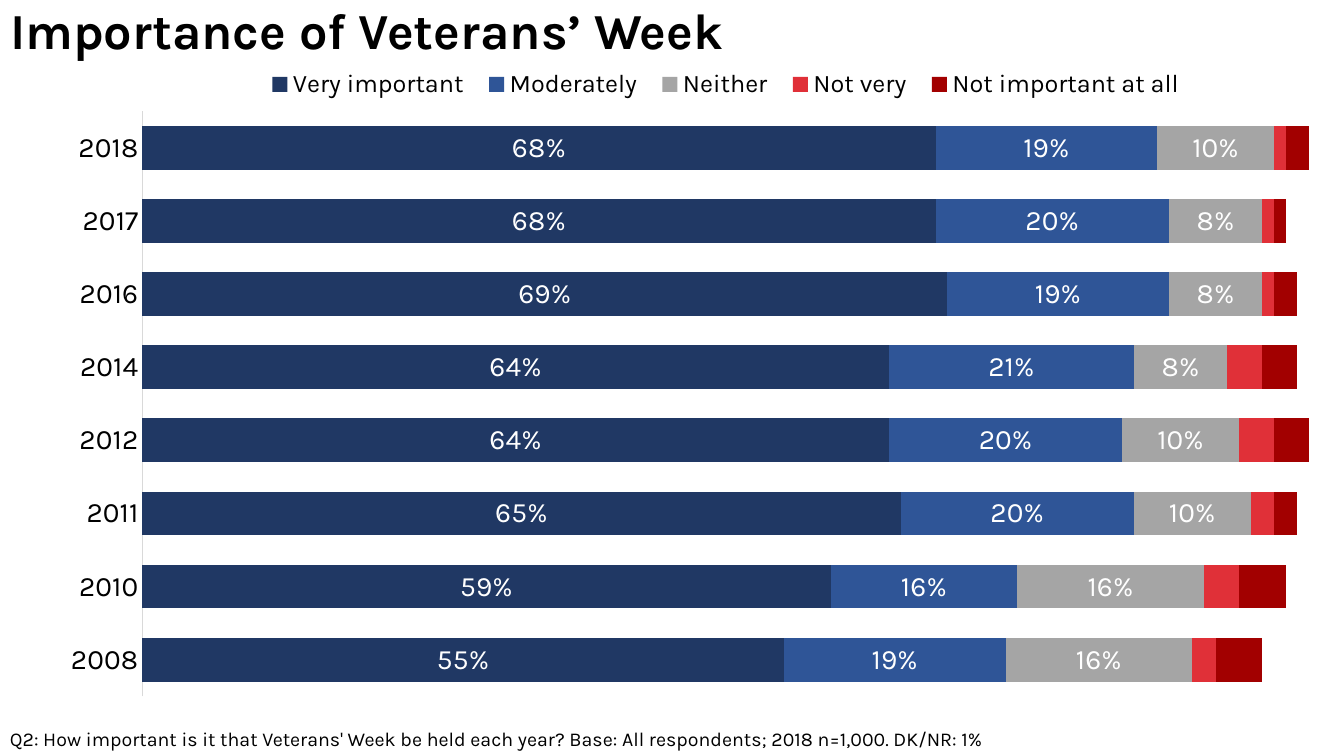
import pptx
import pptx.chart.data
import pptx.dml.color
import pptx.enum.chart
import pptx.enum.text
import pptx.oxml
import pptx.oxml.ns
import pptx.util

Pt = pptx.util.Pt
RGBColor = pptx.dml.color.RGBColor
enums = pptx.enum.chart

FONT = "Karla"
BLACK = RGBColor(0x00, 0x00, 0x00)
WHITE = RGBColor(0xFF, 0xFF, 0xFF)
RULE = RGBColor(0xD9, 0xD9, 0xD9)
NAVY = RGBColor(0x20, 0x38, 0x64)
BLUE = RGBColor(0x2F, 0x55, 0x97)
GREY = RGBColor(0xA5, 0xA5, 0xA5)
RED = RGBColor(0xE0, 0x30, 0x38)
DARK = RGBColor(0xA2, 0x00, 0x00)

YEARS = ["2008", "2010", "2011", "2012", "2014", "2016", "2017", "2018"]
SERIES = [
    ("Very important", NAVY, True, [55, 59, 65, 64, 64, 69, 68, 68]),
    ("Moderately", BLUE, True, [19, 16, 20, 20, 21, 19, 20, 19]),
    ("Neither", GREY, True, [16, 16, 10, 10, 8, 8, 8, 10]),
    ("Not very", RED, False, [2, 3, 2, 3, 3, 1, 1, 1]),
    ("Not important at all", DARK, False, [4, 4, 2, 3, 3, 2, 1, 2]),
]


def style(font, size, color=BLACK, bold=False):
    font.name = FONT
    font.size = Pt(size)
    font.bold = bold
    font.color.rgb = color


def write(frame, text, size, anchor, spacing=1.0, **look):
    frame.word_wrap = True
    frame.vertical_anchor = anchor
    para = frame.paragraphs[0]
    para.line_spacing = spacing
    run = para.add_run()
    run.text = text
    style(run.font, size, **look)


def place(part, box):
    part.left, part.top, part.width, part.height = map(Pt, box)


def layout(after, x, y, w, h, inner=False):
    target = '<c:layoutTarget val="inner"/>' if inner else ""
    old = after.getparent().find(pptx.oxml.ns.qn("c:layout"))
    if old is not None:
        after.getparent().remove(old)
    return pptx.oxml.parse_xml(
        f'<c:layout {pptx.oxml.ns.nsdecls("c")}><c:manualLayout>{target}'
        '<c:xMode val="edge"/><c:yMode val="edge"/>'
        f'<c:x val="{x}"/><c:y val="{y}"/><c:w val="{w}"/><c:h val="{h}"/>'
        '</c:manualLayout></c:layout>')


def add_title(slide, box):
    title = slide.shapes.title
    place(title, box)
    title.fill.solid()
    title.fill.fore_color.rgb = WHITE
    write(title.text_frame, "Importance of Veterans’ Week", 36,
          pptx.enum.text.MSO_ANCHOR.MIDDLE, spacing=0.9, bold=True)
    title.text_frame.paragraphs[0].alignment = pptx.enum.text.PP_ALIGN.LEFT


def add_bars(slide, box):
    data = pptx.chart.data.CategoryChartData(number_format="0%")
    data.categories = YEARS
    for name, color, shown, values in SERIES:
        data.add_series(name, [value / 100 for value in values])
    frame = slide.shapes.add_chart(
        enums.XL_CHART_TYPE.BAR_STACKED, *map(Pt, box), data)
    slide.shapes.title.element.addprevious(frame.element)
    chart = frame.chart
    style(chart.font, 16)
    chart.has_title = False

    plot = chart.plots[0]
    plot.gap_width = 67
    plot.overlap = 100
    plot.vary_by_categories = False
    for bar, (name, color, shown, values) in zip(plot.series, SERIES):
        bar.format.fill.solid()
        bar.format.fill.fore_color.rgb = color
        if shown:
            labels = bar.data_labels
            labels.show_value = True
            labels.number_format = "0%"
            labels.number_format_is_linked = False
            labels.position = enums.XL_LABEL_POSITION.CENTER
            style(labels.font, 20, color=WHITE)

    years = chart.category_axis
    years.major_tick_mark = enums.XL_TICK_MARK.NONE
    years.format.line.color.rgb = RULE
    years.format.line.width = Pt(0.75)
    style(years.tick_labels.font, 20)
    scale = chart.value_axis
    scale.minimum_scale = 0
    scale.maximum_scale = 1
    scale.has_major_gridlines = False
    scale.visible = False

    chart.has_legend = True
    legend = chart.legend
    legend.position = enums.XL_LEGEND_POSITION.TOP
    legend.include_in_layout = False
    style(legend.font, 18)
    qn = pptx.oxml.ns.qn
    spot = legend._element.find(qn("c:legendPos"))
    spot.addnext(layout(spot, 0.19, 0.02, 0.7, 0.06))
    first = chart.element.find(".//" + qn("c:barChart"))
    first.addprevious(layout(first, 0.106, 0.091, 0.868, 0.895, inner=True))


def add_note(slide, box):
    note = slide.shapes.add_textbox(*map(Pt, box))
    write(note.text_frame,
          "Q2: How important is it that Veterans' Week be held each year? "
          "Base: All respondents; 2018 n=1,000. DK/NR: 1%",
          14, pptx.enum.text.MSO_ANCHOR.TOP)


def main():
    deck = pptx.Presentation()
    deck.slide_width = Pt(960)
    deck.slide_height = Pt(540)
    slide = deck.slides.add_slide(deck.slide_layouts[5])
    add_title(slide, (0, -1, 960, 49))
    add_bars(slide, (0, 37, 960, 467))
    add_note(slide, (0, 516, 960, 24))
    deck.save("out.pptx")


if __name__ == "__main__":
    main()
